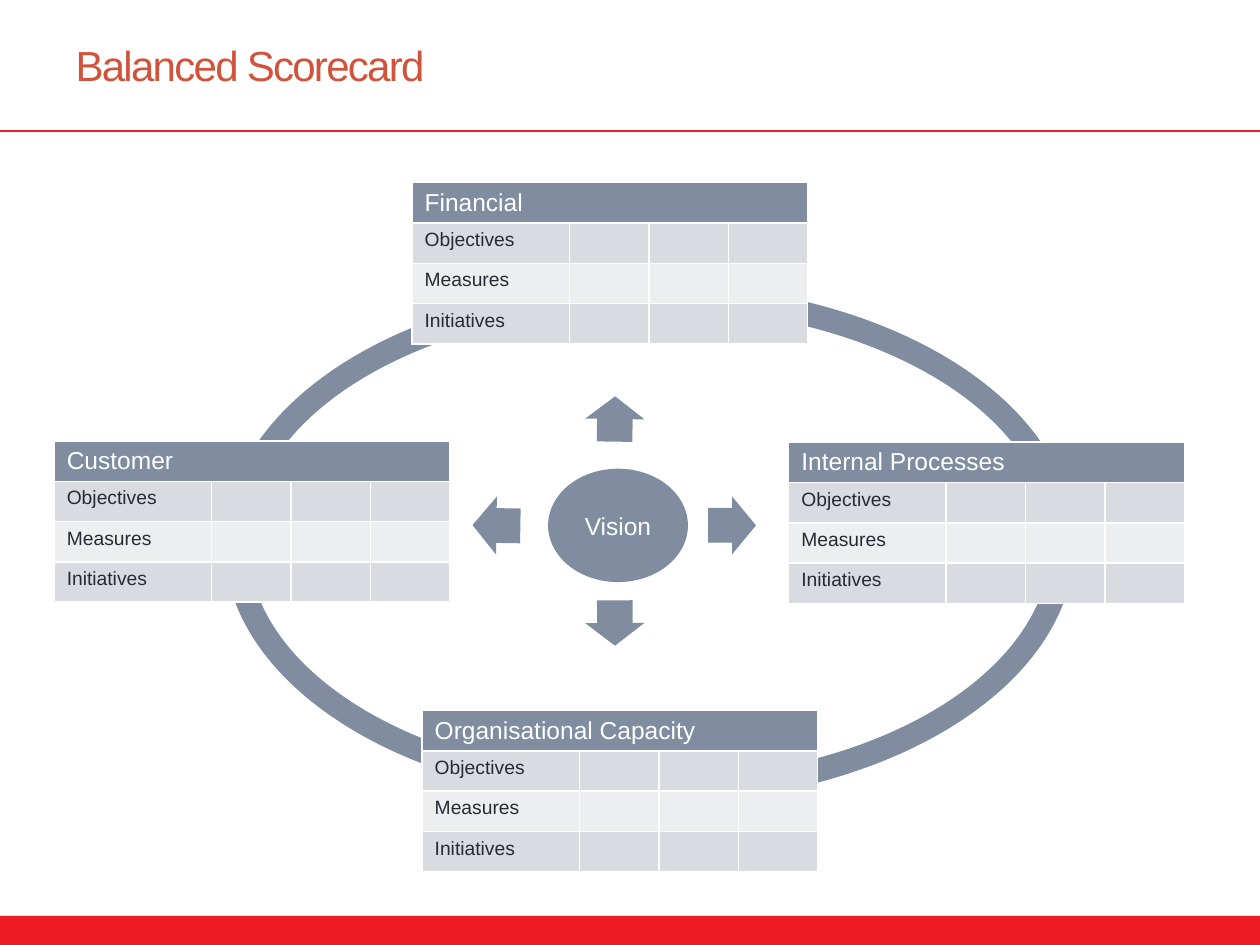
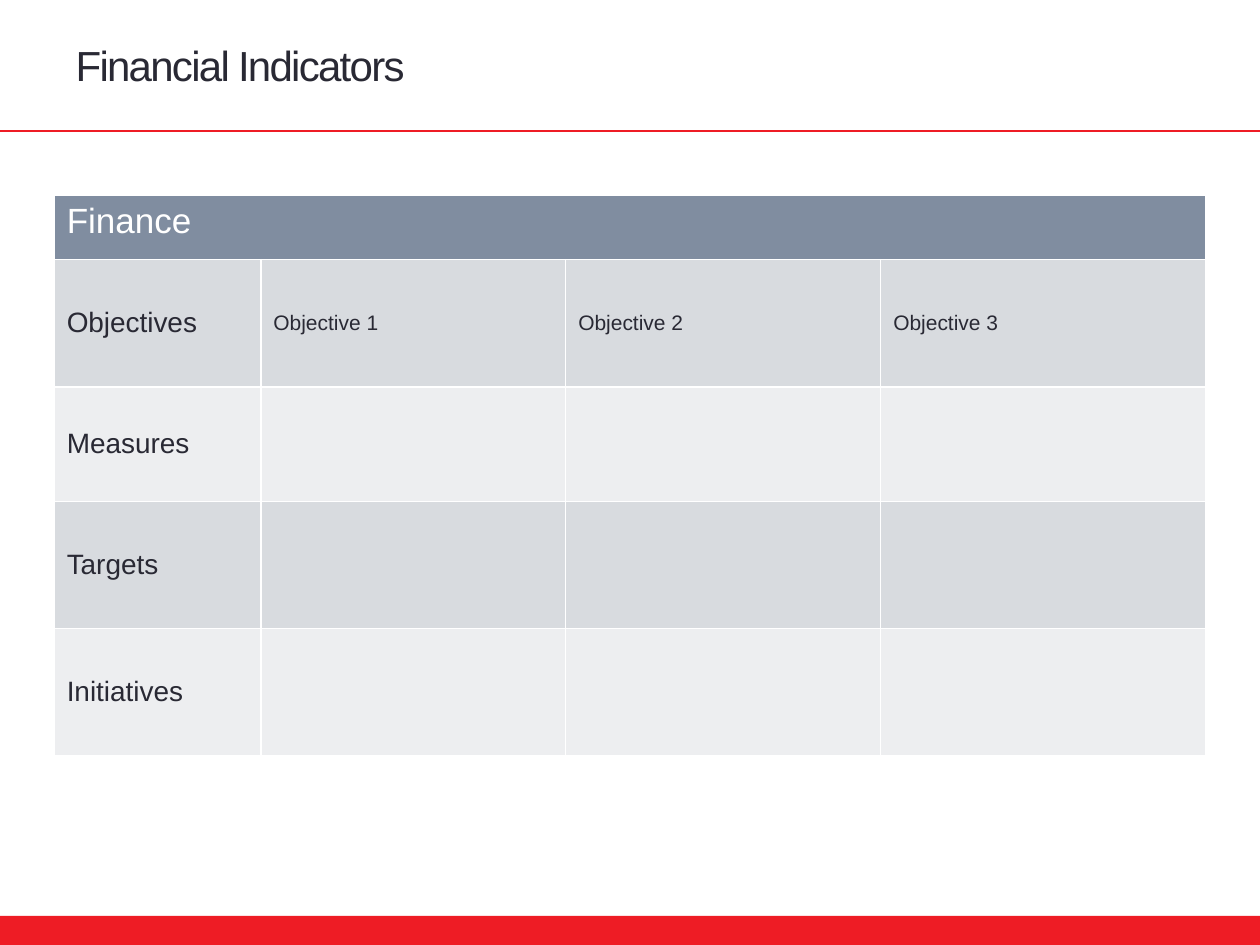
from dataclasses import dataclass

from lxml import etree
from pptx import Presentation
from pptx.dml.color import RGBColor
from pptx.enum.shapes import MSO_CONNECTOR, MSO_SHAPE
from pptx.enum.text import MSO_ANCHOR, MSO_AUTO_SIZE, PP_ALIGN
from pptx.oxml.ns import qn
from pptx.util import Inches, Pt

RECT, OVAL = MSO_SHAPE.RECTANGLE, MSO_SHAPE.OVAL
RING, ARROW = MSO_SHAPE.BLOCK_ARC, MSO_SHAPE.RIGHT_ARROW
STRAIGHT = MSO_CONNECTOR.STRAIGHT
TOP, MIDDLE = MSO_ANCHOR.TOP, MSO_ANCHOR.MIDDLE
LEFT, CENTER = PP_ALIGN.LEFT, PP_ALIGN.CENTER
NO_AUTOFIT = MSO_AUTO_SIZE.NONE
TITLE_ONLY = 5


@dataclass(frozen=True)
class Theme:
    """Colours, font and type sizes shared by the slides."""
    font: str = "Arial"
    red: str = "EE1C25"
    accent: str = "D2533C"
    slate: str = "808DA0"
    dark: str = "292934"
    white: str = "FFFFFF"
    bands: tuple = ("D8DBDF", "EDEEF0")
    title: int = 24
    finance_head: int = 20
    finance_label: int = 16
    finance_item: int = 12
    card_head: int = 14
    card_label: int = 11


T = Theme()


def rgb(color):
    """Turn a hex string into a colour."""
    return RGBColor.from_string(color)


def style(p, size, color, align=LEFT):
    """Format a paragraph."""
    p.alignment = align
    p.font.name, p.font.size = T.font, Pt(size)
    p.font.color.rgb = rgb(color)


def add_solid(s, kind, box, color):
    """Add a flat preset shape without outline or shadow."""
    sp = s.shapes.add_shape(kind, *map(Inches, box))
    sp.shadow.inherit = False
    sp.fill.solid()
    sp.fill.fore_color.rgb = rgb(color)
    sp.line.fill.background()
    return sp


def add_frame(prs, s):
    """Put the red rule and footer band on the slide master."""
    band = add_solid(s, RECT, (0, 7.27, 10, 0.24), T.red)
    rule = s.shapes.add_connector(STRAIGHT, 0, Inches(1.04), Inches(10), Inches(1.04))
    rule.line.color.rgb = rgb(T.red)
    rule.line.width = Pt(1.5)
    etree.SubElement(rule.element.spPr, qn("a:effectLst"))
    for sp in (band, rule):
        prs.slide_master.element.cSld.spTree.append(sp.element)


def add_title(s, text, color):
    """Place and format the title placeholder."""
    sp = s.shapes.title
    sp.left, sp.top, sp.width, sp.height = map(Inches, (0.5, 0.15, 6.94, 0.72))
    tf = sp.text_frame
    tf.text = text
    tf.word_wrap, tf.auto_size = True, NO_AUTOFIT
    tf.vertical_anchor = MIDDLE
    tf.margin_left = tf.margin_right = Inches(0.1)
    tf.margin_top = tf.margin_bottom = 0
    p = tf.paragraphs[0]
    style(p, T.title, color)
    p.runs[0]._r.get_or_add_rPr().set("spc", "-100")


def format_cell(cell, text, size, color, fill, anchor):
    """Fill, border and write one table cell."""
    tcPr = cell._tc.get_or_add_tcPr()
    for side in ("lnL", "lnR", "lnT", "lnB"):
        ln = etree.SubElement(tcPr, qn(f"a:{side}"), w=str(Pt(1)))
        paint = etree.SubElement(ln, qn("a:solidFill"))
        etree.SubElement(paint, qn("a:srgbClr"), val=T.white)
    cell.fill.solid()
    cell.fill.fore_color.rgb = rgb(fill)
    cell.vertical_anchor = anchor
    cell.margin_left = cell.margin_right = Inches(0.1)
    cell.margin_top = cell.margin_bottom = Inches(0.05 if text else 0)
    if text:
        cell.text = text
    style(cell.text_frame.paragraphs[0], size, color)


def add_scorecard(s, left, top, head, rows, widths, heights, sizes, anchor):
    """Add a table with a merged heading above banded rows."""
    box = (left, top, sum(widths), sum(heights))
    table = s.shapes.add_table(len(heights), len(widths), *map(Inches, box)).table
    table.first_row = table.horz_banding = False
    for col, width in zip(table.columns, widths):
        col.width = Inches(width)
    for row, height in zip(table.rows, heights):
        row.height = Inches(height)
    head_size, label_size, item_size = sizes
    for c in range(len(widths)):
        text = "" if c else head
        format_cell(table.cell(0, c), text, head_size, T.white, T.slate, TOP)
    table.cell(0, 0).merge(table.cell(0, len(widths) - 1))
    for r, texts in enumerate(rows):
        for c in range(len(widths)):
            text = texts[c] if c < len(texts) else ""
            size = item_size if c else label_size
            format_cell(table.cell(r + 1, c), text, size, T.dark, T.bands[r % 2], anchor)


def add_ring(s, left, top, width, height):
    """Add the elliptical ring that links the four perspectives."""
    sp = add_solid(s, RING, (left, top, width, height), T.slate)
    for i, value in enumerate((0.07, 215.93, 0.19 / height)):
        sp.adjustments[i] = value


def add_hub(s, left, top):
    """Add the vision oval with an arrow toward each perspective."""
    arrows = ((1.87, 0.8, 0.38, 0.46, 0), (0.95, -0.05, 0.36, 0.47, 270.8),
              (0.95, 1.57, 0.36, 0.47, 89.6), (0, 0.8, 0.38, 0.46, 180.9))
    for dx, dy, width, height, angle in arrows:
        sp = add_solid(s, ARROW, (left + dx, top + dy, width, height), T.slate)
        sp.adjustments[0], sp.adjustments[1] = 0.6, 0.5
        sp.rotation = angle
    sp = add_solid(s, OVAL, (left + 0.6, top + 0.58, 1.11, 0.9), T.slate)
    tf = sp.text_frame
    tf.text = "Vision"
    tf.vertical_anchor = MIDDLE
    tf.margin_left = tf.margin_right = 0
    style(tf.paragraphs[0], T.card_head, T.white, CENTER)


def build_scorecard_slide(s):
    """Build the balanced scorecard diagram."""
    add_title(s, "Balanced Scorecard", T.accent)
    add_ring(s, 1.78, 2.25, 6.75, 4.13)
    add_hub(s, 3.75, 3.14)
    rows = [["Objectives"], ["Measures"], ["Initiatives"]]
    sizes = (T.card_head, T.card_label, T.card_label)
    cards = (("Financial", 3.27, 1.45), ("Customer", 0.43, 3.5),
             ("Organisational Capacity", 3.35, 5.64), ("Internal Processes", 6.26, 3.51))
    for head, left, top in cards:
        add_scorecard(s, left, top, head, rows, [1.25] + [0.63] * 3, [0.32] * 4, sizes, TOP)


def build_indicators_slide(s):
    """Build the financial indicators table."""
    add_title(s, "Financial Indicators", T.dark)
    rows = [["Objectives"] + [f"Objective {n}" for n in (1, 2, 3)],
            ["Measures"], ["Targets"], ["Initiatives"]]
    sizes = (T.finance_head, T.finance_label, T.finance_item)
    add_scorecard(s, 0.43, 1.55, "Finance", rows, [1.64, 2.42, 2.5, 2.58],
                  [0.51, 1.01, 0.91, 1.01, 1.01], sizes, MIDDLE)


def main():
    """Build and save the presentation."""
    prs = Presentation()
    prs.slide_width, prs.slide_height = Inches(10), Inches(7.5)
    layout = prs.slide_layouts[TITLE_ONLY]
    scorecard, indicators = (prs.slides.add_slide(layout) for _ in range(2))
    add_frame(prs, scorecard)
    build_scorecard_slide(scorecard)
    build_indicators_slide(indicators)
    prs.save("out.pptx")


if __name__ == "__main__":
    main()
